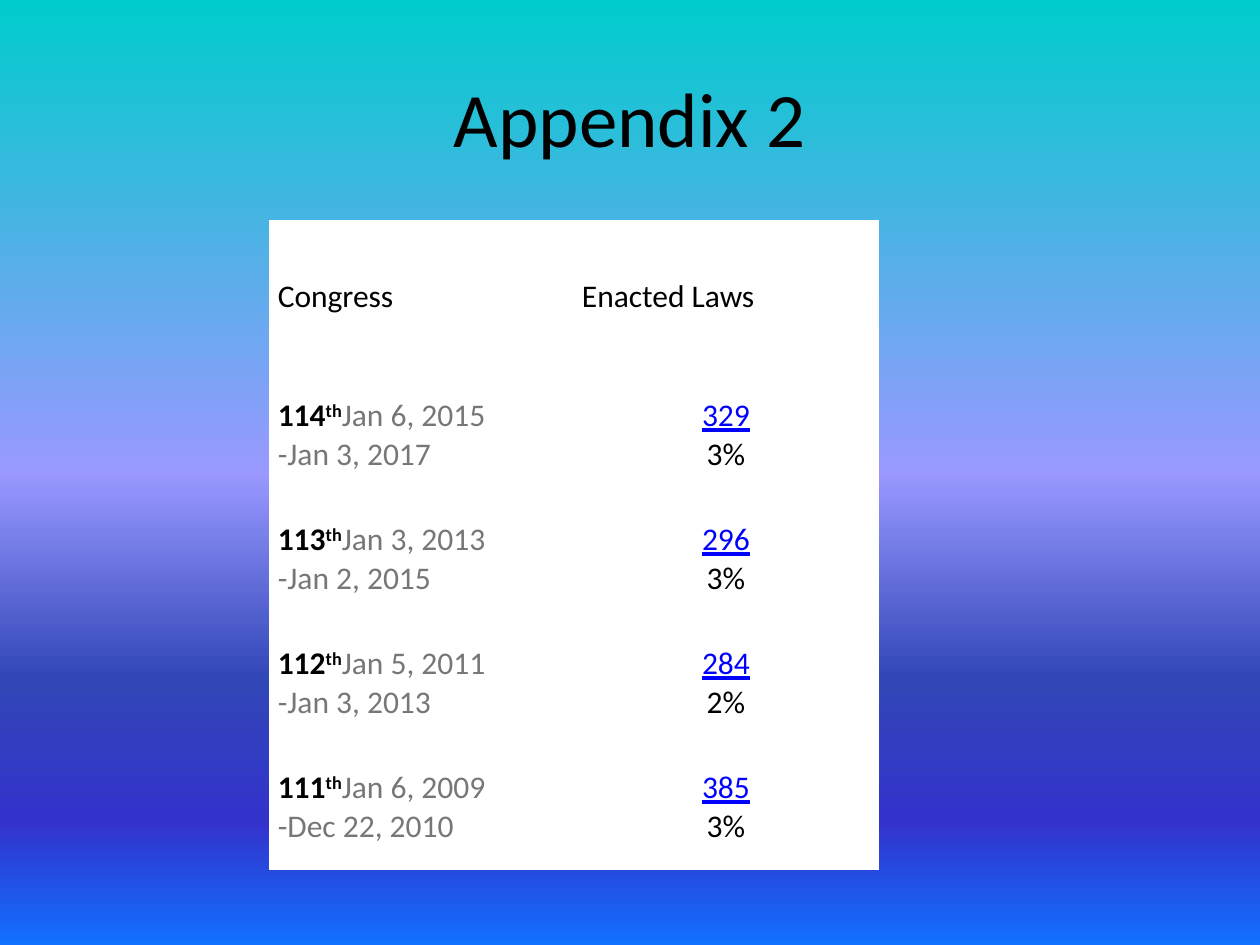
"""Builds the appendix slide listing enacted laws per Congress."""
from lxml.etree import SubElement
from pptx import Presentation
from pptx.dml.color import RGBColor
from pptx.enum.text import MSO_ANCHOR, PP_ALIGN
from pptx.oxml.ns import qn
from pptx.util import Cm, Pt

COLORS = {"ink": "000000", "dates": "777777", "link": "0000FF", "cell": "FFFFFF"}
SKY = [(0, "00CCCC"), (50, "9999FF"), (72, "3146B7"), (87, "3333CC"), (100, "1170FF")]
HEADINGS = ["Congress", "Enacted Laws"]
CONGRESSES = [
    ("114", "Jan 6, 2015", "-Jan 3, 2017", "329", "3%"),
    ("113", "Jan 3, 2013", "-Jan 2, 2015", "296", "3%"),
    ("112", "Jan 5, 2011", "-Jan 3, 2013", "284", "2%"),
    ("111", "Jan 6, 2009", "-Dec 22, 2010", "385", "3%"),
]


class SlideBuilder:
    def __init__(self, page, font="Calibri", size=18):
        self.page, self.font, self.size = page, font, size

    def background(self, stops):
        fill = self.page.background.fill
        fill.gradient()
        fill.gradient_angle = 270
        stop_list = self.page.element.find(".//" + qn("a:gsLst"))
        stop_list.clear()
        for position, color in stops:
            stop = SubElement(stop_list, qn("a:gs"), pos=str(position * 1000))
            SubElement(stop, qn("a:srgbClr"), val=color)

    def run(self, para, text, color="ink", size=None, bold=False, underline=False, raised=False):
        span = para.add_run()
        span.text = text
        span.font.name = self.font
        span.font.size = Pt(size or self.size)
        span.font.bold = bold
        span.font.underline = underline
        span.font.color.rgb = RGBColor.from_string(COLORS[color])
        if raised:
            span.font._element.set("baseline", "30000")

    def title(self, text):
        box = self.page.shapes.title
        box.left, box.top, box.width, box.height = Cm(1.27), Cm(0.76), Cm(22.86), Cm(3.18)
        box.text_frame.vertical_anchor = MSO_ANCHOR.MIDDLE
        para = box.text_frame.paragraphs[0]
        para.alignment = PP_ALIGN.CENTER
        self.run(para, text, size=44)

    def table(self, left, top, widths, heights):
        frame = self.page.shapes.add_table(
            len(heights), len(widths), Cm(left), Cm(top), Cm(sum(widths)), Cm(sum(heights)))
        table = frame.table
        table.first_row = table.horz_banding = False
        for column, width in zip(table.columns, widths):
            column.width = Cm(width)
        for row, height in zip(table.rows, heights):
            row.height = Cm(height)
        for cell in table.iter_cells():
            cell.fill.solid()
            cell.fill.fore_color.rgb = RGBColor.from_string(COLORS["cell"])
            cell.vertical_anchor = MSO_ANCHOR.MIDDLE
            cell.margin_left = cell.margin_right = Cm(0.16)
            cell.margin_top = cell.margin_bottom = Cm(0.08)
        return table

    def term(self, cell, number, start, end):
        para = cell.text_frame.paragraphs[0]
        self.run(para, number, bold=True)
        self.run(para, "th", bold=True, raised=True)
        self.run(para, start, "dates")
        para.add_line_break()
        self.run(para, end, "dates")

    def laws(self, cell, count, share):
        first, second = cell.text_frame.paragraphs[0], cell.text_frame.add_paragraph()
        first.alignment = second.alignment = PP_ALIGN.CENTER
        self.run(first, count, "link", underline=True)
        self.run(second, share)


def main():
    deck = Presentation()
    deck.slide_width, deck.slide_height = Cm(25.4), Cm(19.05)
    builder = SlideBuilder(deck.slides.add_slide(deck.slide_layouts[5]))
    builder.background(SKY)
    builder.title("Appendix 2")
    table = builder.table(5.44, 4.45, [6.13] * 2, [3.07] + [2.5] * len(CONGRESSES))
    for column, heading in enumerate(HEADINGS):
        builder.run(table.cell(0, column).text_frame.paragraphs[0], heading)
    for row, (number, start, end, count, share) in enumerate(CONGRESSES, 1):
        builder.term(table.cell(row, 0), number, start, end)
        builder.laws(table.cell(row, 1), count, share)
    deck.save("out.pptx")


if __name__ == "__main__":
    main()
